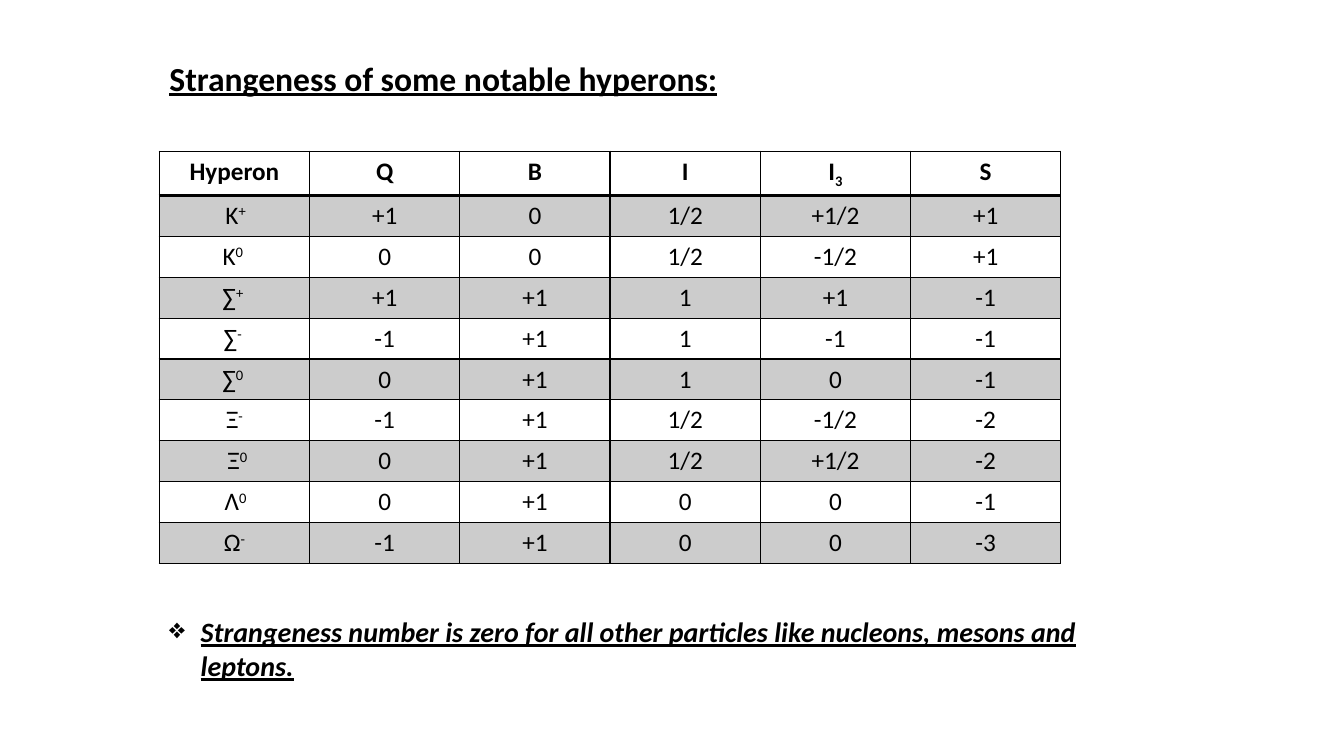
"""Build a slide with a table of hyperon quantum numbers."""
from lxml.etree import SubElement
from pptx import Presentation
from pptx.dml.color import RGBColor
from pptx.enum.text import MSO_ANCHOR as Anchor, PP_ALIGN as Align
from pptx.oxml.ns import qn
from pptx.util import Pt

BLACK = RGBColor(0, 0, 0)
FONT = "Calibri"
LEFT, WIDTH = 113.8, 644
SUBSCRIPT, SUPERSCRIPT = -25000, 30000

HEADER = [("Hyperon",), ("Q",), ("B",), ("I",), ("I", "3"), ("S",)]
HYPERONS = [
    (" K", "+ ", "+1", "0", "1/2", "+1/2", "+1"),
    ("K", "0 ", "0", "0", "1/2", "-1/2", "+1"),
    ("∑", "+ ", "+1", "+1", "1", "+1", "-1"),
    ("∑", "- ", "-1", "+1", "1", "-1", "-1"),
    ("∑", "0 ", "0", "+1", "1", "0", "-1"),
    ("Ξ", "-", "-1", "+1", "1/2", "-1/2", "-2"),
    (" Ξ", "0", "0", "+1", "1/2", "+1/2", "-2"),
    (" Λ", "0 ", "0", "+1", "0", "0", "-1"),
    ("Ω", "-", "-1", "+1", "0", "0", "-3"),
]


class SlideBuilder:
    """Hold the text style and the current slide."""

    def __init__(self, slide, font, color):
        self.slide, self.font, self.color = slide, font, color

    def run(self, paragraph, text, size, bold=False, italic=False, underline=False, baseline=0):
        run = paragraph.add_run()
        run.text = text
        run.font.name, run.font.size = self.font, Pt(size)
        run.font.bold, run.font.italic, run.font.underline = bold, italic, underline
        run.font.color.rgb = self.color
        if baseline:
            run._r.get_or_add_rPr().set("baseline", str(baseline))

    def title(self, text, left, top, width, height, size):
        shape = self.slide.shapes.title
        shape.left, shape.top, shape.width, shape.height = map(Pt, (left, top, width, height))
        shape.text_frame.vertical_anchor = Anchor.TOP
        paragraph = shape.text_frame.paragraphs[0]
        paragraph.alignment = Align.LEFT
        self.run(paragraph, text, size, bold=True, underline=True)

    def bullet(self, text, left, top, width, height, size, indent):
        shape = self.slide.shapes.add_textbox(*map(Pt, (left, top, width, height)))
        shape.text_frame.word_wrap = True
        paragraph = shape.text_frame.paragraphs[0]
        properties = paragraph._p.get_or_add_pPr()
        properties.set("marL", str(Pt(indent)))
        properties.set("indent", str(-Pt(indent)))
        SubElement(properties, qn("a:buChar"), char="❖")
        self.run(paragraph, text, size, bold=True, italic=True, underline=True)

    def borders(self, cell, top, bottom):
        properties = cell._tc.get_or_add_tcPr()
        for side, weight in (("L", 1), ("R", 1), ("T", top), ("B", bottom)):
            line = SubElement(properties, qn(f"a:ln{side}"), w=str(Pt(weight)))
            fill = SubElement(line, qn("a:solidFill"))
            SubElement(fill, qn("a:srgbClr"), val=str(self.color))

    def shade(self, cell, percent):
        cell.fill.solid()
        cell.fill.fore_color.rgb = self.color
        color = cell._tc.tcPr.find(qn("a:solidFill")).find(qn("a:srgbClr"))
        SubElement(color, qn("a:alpha"), val=str(percent * 1000))

    def table(self, rows, left, top, width, row_height, size):
        columns = len(rows[0])
        frame = self.slide.shapes.add_table(
            len(rows), columns, *map(Pt, (left, top, width, row_height * len(rows))))
        table = frame.table
        table.first_row = table.horz_banding = False
        for column in table.columns:
            column.width = Pt(width / columns)
        for r, row in enumerate(rows):
            table.rows[r].height = Pt(row_height)
            for c, (text, *script) in enumerate(row):
                cell = table.cell(r, c)
                paragraph = cell.text_frame.paragraphs[0]
                paragraph.alignment = Align.CENTER
                self.run(paragraph, text, size, bold=r == 0)
                for mark in script:
                    self.run(paragraph, mark, size, bold=r == 0,
                             baseline=SUPERSCRIPT if r else SUBSCRIPT)
                self.borders(cell, top=2 if r == 1 else 1, bottom=2 if r == 0 else 1)
                if r % 2:
                    self.shade(cell, 20)
                else:
                    cell.fill.background()


def main():
    presentation = Presentation()
    presentation.slide_width, presentation.slide_height = Pt(960), Pt(540)
    slide = presentation.slides.add_slide(presentation.slide_layouts[5])
    builder = SlideBuilder(slide, FONT, BLACK)
    builder.title("Strangeness of some notable hyperons:", LEFT, 37.5, WIDTH, 36, 24)
    rows = [HEADER] + [[(name, charge)] + [(value,) for value in values]
                       for name, charge, *values in HYPERONS]
    builder.table(rows, LEFT, 108, WIDTH, 28.8, 18)
    builder.bullet(
        "Strangeness number is zero for all other particles like nucleons, mesons and leptons.",
        LEFT, 435.6, 670, 55.5, 20, 22.5)
    presentation.save("out.pptx")


if __name__ == "__main__":
    main()
